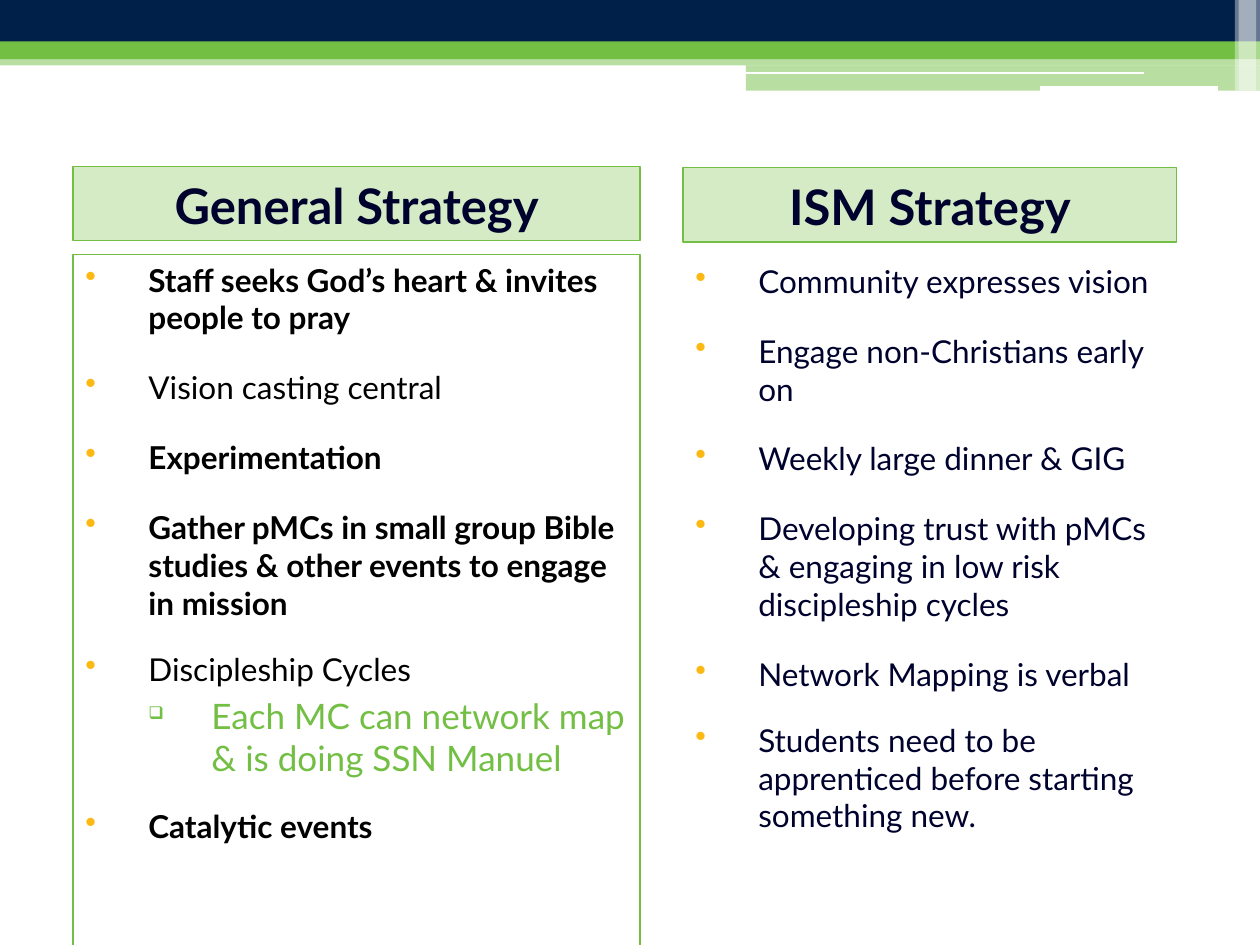
from dataclasses import dataclass

from lxml import etree
from pptx import Presentation
from pptx.dml.color import RGBColor
from pptx.enum import shapes, text
from pptx.oxml import ns
from pptx.util import Inches, Pt


@dataclass(frozen=True)
class Theme:
    font: str = "Lato"
    green: str = "72BF44"
    navy: str = "001F49"
    ink: str = "00022E"
    black: str = "000000"
    white: str = "FFFFFF"
    gold: str = "FDB913"
    heading_size: float = 28
    body_size: float = 18
    sub_size: float = 20


THEME = Theme()


@dataclass(frozen=True)
class Panel:
    left: float
    top: float
    width: float
    height: float
    fill: str | None = None
    opacity: int = 100
    outline: str | None = None


@dataclass(frozen=True)
class Rule:
    left: float
    right: float
    y: float
    weight: float


@dataclass(frozen=True)
class Point:
    wording: str
    gap: float = 18.3
    bold: bool = False
    sub: bool = False


@dataclass(frozen=True)
class Strategy:
    heading: str
    heading_panel: Panel
    points_panel: Panel
    color: str
    points: tuple[Point, ...]


BANDS = (
    Panel(0, 0.29, 10, 0.18, THEME.green),
    Panel(0, 0.42, 10, 0.1, THEME.green, 50),
    Panel(5.92, 0.52, 4.08, 0.2, THEME.green, 50),
    Panel(0, 0, 10, 0.33, THEME.navy),
)
RULES = (Rule(5.92, 9.08, 0.58, 1.5), Rule(8.25, 9.67, 0.7, 3))
EDGES = tuple(Panel(left, 0, 0.17, 0.72, THEME.white, 40) for left in (9.83, 9.8))

STRATEGIES = (
    Strategy(
        "General Strategy",
        Panel(0.58, 1.32, 4.5, 0.59, THEME.green, 30, THEME.green),
        Panel(0.58, 2.02, 4.5, 5.73, outline=THEME.green),
        THEME.black,
        (
            Point("Staff seeks God’s heart & invites people to pray", 0, True),
            Point("Vision casting central"),
            Point("Experimentation", bold=True),
            Point("Gather pMCs in small group Bible studies & other events "
                  "to engage in mission", bold=True),
            Point("Discipleship Cycles", 16.2),
            Point("Each MC can network map & is doing SSN Manuel", 4, sub=True),
            Point("Catalytic events", 16.2, True),
        ),
    ),
    Strategy(
        "ISM Strategy",
        Panel(5.42, 1.33, 3.92, 0.59, THEME.green, 30, THEME.green),
        Panel(5.42, 2.03, 3.92, 5.47),
        THEME.ink,
        (
            Point("Community expresses vision", 0),
            Point("Engage non-Christians early on"),
            Point("Weekly large dinner & GIG"),
            Point("Developing trust with pMCs & engaging in low risk "
                  "discipleship cycles"),
            Point("Network Mapping is verbal"),
            Point("Students need to be apprenticed before starting "
                  "something new.", 16.2),
        ),
    ),
)


def rgb(color: str) -> RGBColor:
    return RGBColor.from_string(color)


def draw_panel(slide, panel: Panel):
    box = slide.shapes.add_shape(
        shapes.MSO_SHAPE.RECTANGLE,
        *map(Inches, (panel.left, panel.top, panel.width, panel.height)))
    box.shadow.inherit = False
    if panel.fill:
        box.fill.solid()
        box.fill.fore_color.rgb = rgb(panel.fill)
        if panel.opacity < 100:
            tint = box.fill._xPr.find(".//" + ns.qn("a:srgbClr"))
            etree.SubElement(tint, ns.qn("a:alpha"), val=str(panel.opacity * 1000))
    else:
        box.fill.background()
    if panel.outline:
        box.line.color.rgb = rgb(panel.outline)
        box.line.width = Pt(0.75)
    else:
        box.line.fill.background()
    return box


def draw_rule(slide, rule: Rule) -> None:
    line = slide.shapes.add_connector(
        shapes.MSO_CONNECTOR.STRAIGHT,
        *map(Inches, (rule.left, rule.y, rule.right, rule.y)))
    line.line.color.rgb = rgb(THEME.white)
    line.line.width = Pt(rule.weight)
    etree.SubElement(line._element.spPr, ns.qn("a:effectLst"))


def style(paragraph, size: float, color: str, bold: bool) -> None:
    for run in paragraph.runs:
        run.font.name = THEME.font
        run.font.size = Pt(size)
        run.font.bold = bold
        run.font.color.rgb = rgb(color)


def add_bullet(paragraph, sub: bool) -> None:
    properties = paragraph._p.get_or_add_pPr()
    properties.set("marL", str(Inches(1 if sub else 0.5)))
    properties.set("indent", str(Inches(-0.5)))
    tint = etree.SubElement(properties, ns.qn("a:buClr"))
    etree.SubElement(tint, ns.qn("a:srgbClr"), val=THEME.green if sub else THEME.gold)
    if sub:
        etree.SubElement(properties, ns.qn("a:buSzPct"), val="50000")
    etree.SubElement(properties, ns.qn("a:buChar"), char="❑" if sub else "•")


def draw_strategy(slide, strategy: Strategy) -> None:
    heading = draw_panel(slide, strategy.heading_panel).text_frame
    heading.word_wrap = True
    heading.vertical_anchor = text.MSO_ANCHOR.BOTTOM
    heading.text = strategy.heading
    heading.paragraphs[0].alignment = text.PP_ALIGN.CENTER
    style(heading.paragraphs[0], THEME.heading_size, THEME.ink, True)

    body = draw_panel(slide, strategy.points_panel).text_frame
    body.word_wrap = True
    body.vertical_anchor = text.MSO_ANCHOR.TOP
    for index, point in enumerate(strategy.points):
        paragraph = body.add_paragraph() if index else body.paragraphs[0]
        paragraph.text = point.wording
        add_bullet(paragraph, point.sub)
        paragraph.level = int(point.sub)
        paragraph.alignment = text.PP_ALIGN.LEFT
        paragraph.space_before = Pt(point.gap)
        style(paragraph,
              THEME.sub_size if point.sub else THEME.body_size,
              THEME.green if point.sub else strategy.color,
              point.bold)


def main() -> None:
    deck = Presentation()
    deck.slide_width, deck.slide_height = Inches(10), Inches(7.5)
    slide = deck.slides.add_slide(deck.slide_layouts[6])
    for band in BANDS:
        draw_panel(slide, band)
    for rule in RULES:
        draw_rule(slide, rule)
    for edge in EDGES:
        draw_panel(slide, edge)
    for strategy in STRATEGIES:
        draw_strategy(slide, strategy)
    deck.save("out.pptx")


if __name__ == "__main__":
    main()
